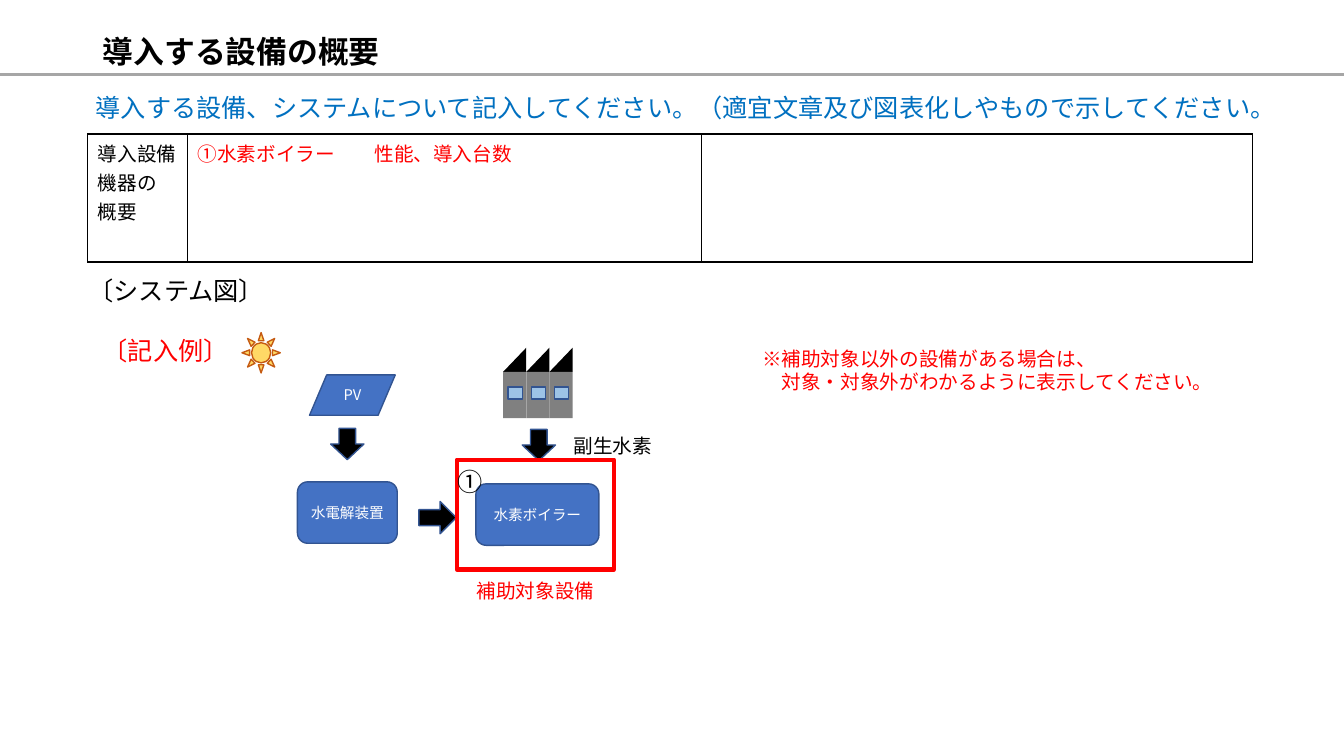
import pptx
import pptx.util
import pptx.dml.color
import pptx.enum.shapes
import pptx.enum.text
import pptx.oxml
import pptx.oxml.ns

Inches, Pt = pptx.util.Inches, pptx.util.Pt
RGBColor = pptx.dml.color.RGBColor
KIND = pptx.enum.shapes.MSO_SHAPE
ALIGN = pptx.enum.text.PP_ALIGN
ANCHOR = pptx.enum.text.MSO_ANCHOR

FONT = "Noto Sans CJK JP"
BLACK = RGBColor(0x00, 0x00, 0x00)
WHITE = RGBColor(0xFF, 0xFF, 0xFF)
RED = RGBColor(0xFF, 0x00, 0x00)
AZURE = RGBColor(0x00, 0x70, 0xC0)
BLUE = RGBColor(0x44, 0x72, 0xC4)
NAVY = RGBColor(0x32, 0x54, 0x91)
GRAY = RGBColor(0x80, 0x80, 0x80)
SILVER = RGBColor(0xA6, 0xA6, 0xA6)
SKY = RGBColor(0x9D, 0xC3, 0xE6)
GOLD = RGBColor(0xFF, 0xD9, 0x66)
RUST = RGBColor(0xC5, 0x5A, 0x11)

# Content
TITLE = "導入する設備の概要"
CELLS = [
    (0.99, ["導入設備機器の", "概要"], BLACK),
    (5.1, ["①水素ボイラー　　性能、導入台数"], RED),
    (5.46, [], BLACK),
]
# left, top, width, height, lines, size, colour
NOTES = [
    (0.92, 3.26, 1.76, 0.4, ["〔記入例〕"], 18, RED),
    (0.85, 0.85, 11.98, 0.4,
     ["導入する設備、システムについて記入してください。"
      "（適宜文章及び図表化しやもので示してください。"], 18, AZURE),
    (4.44, 4.56, 0.43, 0.4, ["①"], 18, BLACK),
    (5.59, 4.24, 1.87, 0.34, ["副生水素"], 14, BLACK),
    (0.78, 2.67, 2.04, 0.4, ["〔システム図〕"], 18, BLACK),
    (7.46, 3.38, 4.87, 0.57,
     ["※補助対象以外の設備がある場合は、",
      "　対象・対象外がわかるように表示してください。"], 14, RED),
    (4.63, 5.68, 2.72, 0.34, ["補助対象設備"], 14, RED),
]
# kind, left, top, width, height, label
UNITS = [
    (KIND.FLOWCHART_DATA, 3.07, 3.72, 0.85, 0.4, "PV"),
    (KIND.ROUNDED_RECTANGLE, 2.95, 4.78, 0.99, 0.61, "水電解装置"),
    (KIND.ROUNDED_RECTANGLE, 4.72, 4.8, 1.22, 0.61, "水素ボイラー"),
]
# left, top, width, height, rotation
ARROWS = [
    (3.28, 4.25, 0.33, 0.31, 0),
    (4.18, 4.95, 0.32, 0.37, 270),
    (5.18, 4.26, 0.33, 0.31, 0),
]

deck = pptx.Presentation()
deck.slide_width, deck.slide_height = Inches(13.33), Inches(7.5)
slide = deck.slides.add_slide(deck.slide_layouts[5])


def write(frame, lines, size, color, bold=False, align=ALIGN.LEFT, space=None):
    for i, line in enumerate(lines):
        para = frame.paragraphs[0] if i == 0 else frame.add_paragraph()
        para.alignment = align
        if space:
            para.line_spacing = space
        run = para.add_run()
        run.text = line
        font = run.font
        font.name, font.size, font.bold = FONT, Pt(size), bold
        font.color.rgb = color
        east = font._element.makeelement(
            pptx.oxml.ns.qn("a:ea"), {"typeface": FONT})
        font._element.find(pptx.oxml.ns.qn("a:latin")).addnext(east)


def draw(home, kind, box, fill=None, line=None, width=1):
    shape = home.add_shape(kind, *map(Inches, box))
    shape.shadow.inherit = False
    if fill is None:
        shape.fill.background()
    else:
        shape.fill.solid()
        shape.fill.fore_color.rgb = fill
    if line is None:
        shape.line.fill.background()
    else:
        shape.line.color.rgb = line
        shape.line.width = Pt(width)
    return shape


def border(cell):
    props = cell._tc.get_or_add_tcPr()
    for i, side in enumerate(("lnL", "lnR", "lnT", "lnB")):
        props.insert(i, pptx.oxml.parse_xml(
            f'<a:{side} {pptx.oxml.ns.nsdecls("a")} w="12700"><a:solidFill>'
            f'<a:srgbClr val="{BLACK}"/></a:solidFill></a:{side}>'))


# Title and rule
title = slide.shapes.title
title.left, title.top = Inches(0.92), Inches(0.3)
title.width, title.height = Inches(11.5), Inches(0.46)
title.text_frame.vertical_anchor = ANCHOR.MIDDLE
write(title.text_frame, [TITLE], 22, BLACK, bold=True, space=0.9)

rule = slide.shapes.add_connector(
    pptx.enum.shapes.MSO_CONNECTOR.STRAIGHT,
    Inches(0), Inches(0.74), Inches(13.33), Inches(0.74))
rule.line.color.rgb, rule.line.width = SILVER, Pt(2.5)
rule._element.spPr.append(pptx.oxml.parse_xml(
    f'<a:effectLst {pptx.oxml.ns.nsdecls("a")}/>'))

# Equipment table
wide = sum(cell[0] for cell in CELLS)
table = slide.shapes.add_table(
    1, len(CELLS), Inches(0.87), Inches(1.33), Inches(wide), Inches(1.27)).table
table.first_row = table.horz_banding = False
for i, (width, lines, color) in enumerate(CELLS):
    table.columns[i].width = Inches(width)
    cell = table.cell(0, i)
    cell.fill.background()
    border(cell)
    write(cell.text_frame, lines, 14, color)

# System diagram
for kind, *box, label in UNITS:
    unit = draw(slide.shapes, kind, box, BLUE, NAVY)
    frame = unit.text_frame
    frame.margin_left = frame.margin_right = 0
    frame.vertical_anchor = ANCHOR.MIDDLE
    write(frame, [label], 10.5, WHITE, align=ALIGN.CENTER)
for *box, turn in ARROWS:
    draw(slide.shapes, KIND.DOWN_ARROW, box, BLACK, NAVY).rotation = turn
draw(slide.shapes, KIND.SUN, (2.4, 3.3, 0.38, 0.4), GOLD, RUST)

# Factory: three bays, each with a roof, a wall and a window
plant = slide.shapes.add_group_shape().shapes
for bay in range(3):
    left = 4.99 + 0.23 * bay
    roof = draw(plant, KIND.RIGHT_TRIANGLE, (left, 3.45, 0.23, 0.24), BLACK)
    roof._element.spPr.find(pptx.oxml.ns.qn("a:xfrm")).set("flipH", "1")
    draw(plant, KIND.RECTANGLE, (left, 3.69, 0.23, 0.46), GRAY)
    draw(plant, KIND.RECTANGLE, (left + 0.05, 3.84, 0.14, 0.12), SKY, NAVY)

# Frame around the subsidised unit
draw(slide.shapes, KIND.RECTANGLE, (4.53, 4.56, 1.56, 1.09), line=RED, width=3)

# Notes
for *box, lines, size, color in NOTES:
    frame = slide.shapes.add_textbox(*map(Inches, box)).text_frame
    frame.word_wrap = True
    frame.margin_top = Inches(0.07)
    write(frame, lines, size, color, space=Pt(round(size * 1.17, 1)))

deck.save("out.pptx")
